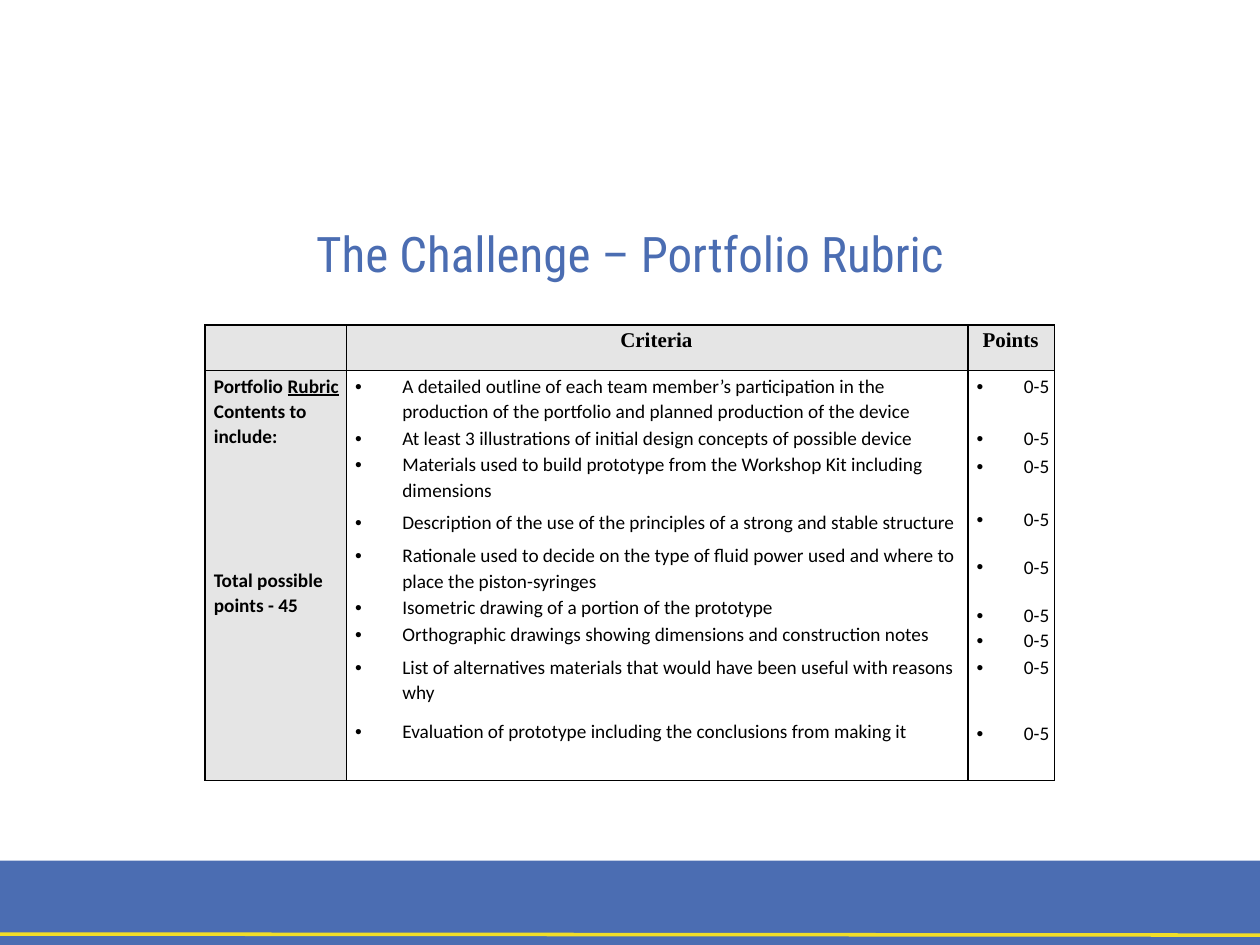
import pptx
import pptx.dml.color
import pptx.enum.shapes
import pptx.enum.text
import pptx.oxml.ns
import pptx.util
from lxml import etree

Cm, Pt = pptx.util.Cm, pptx.util.Pt
RGBColor = pptx.dml.color.RGBColor
PP_ALIGN = pptx.enum.text.PP_ALIGN
qn = pptx.oxml.ns.qn

BLUE = RGBColor(0x4B, 0x6D, 0xB2)
YELLOW = RGBColor(0xF1, 0xDE, 0x27)
GREY = RGBColor(0xE5, 0xE5, 0xE5)
BLACK = RGBColor(0, 0, 0)

# Criterion, space after it, space before its points (pt)
CRITERIA = [
    ("A detailed outline of each team member’s participation in the "
     "production of the portfolio and planned production of the device", 0.7, 0),
    ("At least 3 illustrations of initial design concepts of possible device", 0.7, 15.3),
    ("Materials used to build prototype from the Workshop Kit including dimensions", 4.2, 1.6),
    ("Description of the use of the principles of a strong and stable structure", 4.2, 15.9),
    ("Rationale used to decide on the type of fluid power used and where to "
     "place the piston-syringes", 0.7, 12.5),
    ("Isometric drawing of a portion of the prototype", 0.7, 13.1),
    ("Orthographic drawings showing dimensions and construction notes", 4.2, 0),
    ("List of alternatives materials that would have been useful with reasons why", 8, 0.5),
    ("Evaluation of prototype including the conclusions from making it", 8, 23.3),
]


class RubricSlide:
    title_font, head_font, body_font = "Roboto Condensed", "Times New Roman", "Calibri"
    line_spacing = 1.07

    def __init__(self, prs):
        self.s = prs.slides.add_slide(prs.slide_layouts[6])

    def bar(self, x, y, w, h, color):
        sp = self.s.shapes.add_shape(pptx.enum.shapes.MSO_SHAPE.RECTANGLE,
                                     Cm(x), Cm(y), Cm(w), Cm(h))
        sp.shadow.inherit = False
        sp.fill.solid()
        sp.fill.fore_color.rgb = color
        sp.line.fill.background()

    def line(self, x1, y1, x2, y2, color, width):
        c = self.s.shapes.add_connector(pptx.enum.shapes.MSO_CONNECTOR.STRAIGHT,
                                        Cm(x1), Cm(y1), Cm(x2), Cm(y2))
        c.line.color.rgb = color
        c.line.width = Pt(width)
        etree.SubElement(c._element.spPr, qn("a:effectLst"))

    def format_runs(self, p, font, size, color=BLACK, bold=False):
        for r in p.runs:
            r.font.name, r.font.size, r.font.bold = font, Pt(size), bold
            r.font.color.rgb = color

    def title(self, x, y, w, h, text):
        tf = self.s.shapes.add_textbox(Cm(x), Cm(y), Cm(w), Cm(h)).text_frame
        tf.word_wrap = True
        tf.vertical_anchor = pptx.enum.text.MSO_ANCHOR.MIDDLE
        tf.text = text
        p = tf.paragraphs[0]
        p.alignment = PP_ALIGN.CENTER
        self.format_runs(p, self.title_font, 28, BLUE)

    def table(self, x, y, cols, rows):
        t = self.s.shapes.add_table(len(rows), len(cols), Cm(x), Cm(y),
                                    Cm(sum(cols)), Cm(sum(rows))).table
        t.first_row = t.horz_banding = False
        for col, w in zip(t.columns, cols):
            col.width = Cm(w)
        for row, h in zip(t.rows, rows):
            row.height = Cm(h)
        return t

    def cell(self, cell, fill=None):
        cell.margin_left, cell.margin_top = Cm(0.18), Cm(0.05)
        cell.margin_right, cell.margin_bottom = Cm(0.1), 0
        for side in ("a:lnL", "a:lnR", "a:lnT", "a:lnB"):
            ln = etree.SubElement(cell._tc.get_or_add_tcPr(), qn(side), w=str(Pt(1)))
            solid = etree.SubElement(ln, qn("a:solidFill"))
            etree.SubElement(solid, qn("a:srgbClr"), val=str(BLACK))
        if fill is None:
            cell.fill.background()
        else:
            cell.fill.solid()
            cell.fill.fore_color.rgb = fill

    def header(self, cell, text):
        cell.text_frame.text = text
        p = cell.text_frame.paragraphs[0]
        p.alignment, p.line_spacing = PP_ALIGN.CENTER, self.line_spacing
        self.format_runs(p, self.head_font, 12, bold=True)

    def paragraphs(self, cell, items, bullet=False, bold=False):
        """Fill a cell from (text, space before, space after) items."""
        tf = cell.text_frame
        tf.text = "\n".join(text for text, _, _ in items)
        for p, (_, before, after) in zip(tf.paragraphs, items):
            if bullet:
                pPr = p._p.get_or_add_pPr()
                pPr.set("marL", str(Cm(0.95)))
                pPr.set("indent", str(Cm(-0.95)))
                etree.SubElement(pPr, qn("a:buFont"), typeface="Arial")
                etree.SubElement(pPr, qn("a:buChar"), char="•")
            p.line_spacing = self.line_spacing
            p.space_before, p.space_after = Pt(before), Pt(after)
            self.format_runs(p, self.body_font, 11, bold=bold)


def main():
    prs = pptx.Presentation()
    prs.slide_width, prs.slide_height = Cm(25.4), Cm(19.05)
    slide = RubricSlide(prs)

    # Footer band
    slide.bar(0, 17.35, 25.4, 1.7, BLUE)
    slide.line(0, 18.83, 25.4, 18.85, YELLOW, 2)

    # Title
    slide.title(1.75, 4.24, 21.9, 1.7, "The Challenge – Portfolio Rubric")

    # Rubric table
    t = slide.table(4.13, 6.55, [2.85, 12.53, 1.75], [0.92, 8.26])
    for i in range(2):
        for j in range(3):
            slide.cell(t.cell(i, j), GREY if i == 0 or j == 0 else None)
    slide.header(t.cell(0, 1), "Criteria ")
    slide.header(t.cell(0, 2), "Points ")

    # Row label with one underlined word
    label = t.cell(1, 0)
    slide.paragraphs(label, [("Portfolio ", 0, 0),
                             ("Total possible points - 45", 67.3, 0)], bold=True)
    p = label.text_frame.paragraphs[0]
    for text, underline in (("Rubric ", True), ("Contents to include:", False)):
        r = p.add_run()
        r.text, r.font.underline = text, underline
    slide.format_runs(p, slide.body_font, 11, bold=True)

    # Criteria and their points
    slide.paragraphs(t.cell(1, 1), [(c, 0, after) for c, after, _ in CRITERIA], bullet=True)
    slide.paragraphs(t.cell(1, 2), [("0-5", before, 0) for _, _, before in CRITERIA], bullet=True)

    prs.save("out.pptx")


if __name__ == "__main__":
    main()
